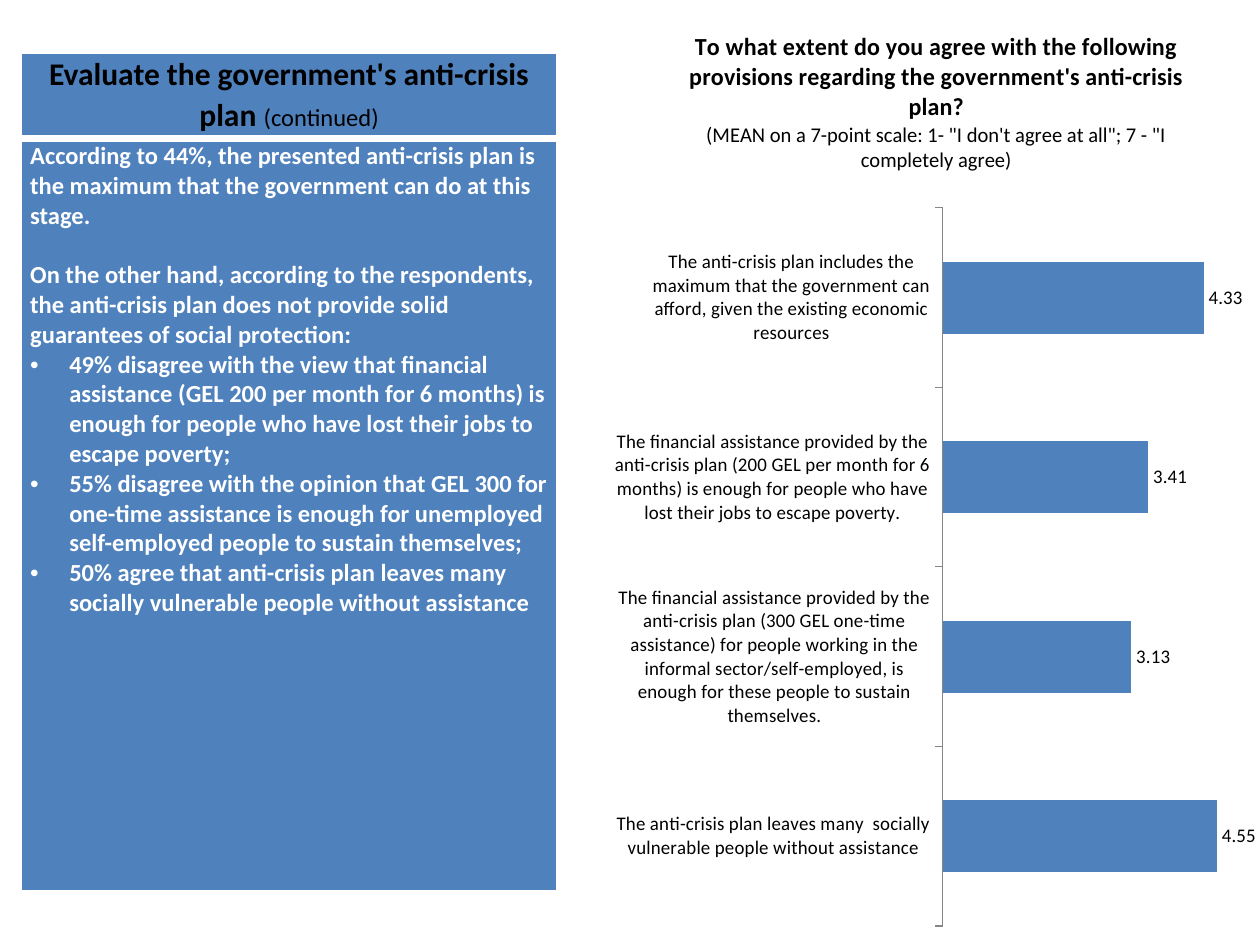
"""Build a slide on public views of the government's anti-crisis plan."""
from lxml import etree
from pptx import Presentation
from pptx.chart.data import CategoryChartData
from pptx.dml.color import RGBColor
from pptx.enum.chart import XL_CHART_TYPE, XL_LABEL_POSITION, XL_TICK_LABEL_POSITION, XL_TICK_MARK
from pptx.enum.text import PP_ALIGN
from pptx.oxml import parse_xml
from pptx.oxml.ns import nsdecls, qn
from pptx.util import Inches, Pt

BAR_CLUSTERED = XL_CHART_TYPE.BAR_CLUSTERED
OUTSIDE_END = XL_LABEL_POSITION.OUTSIDE_END
LABELS_LOW = XL_TICK_LABEL_POSITION.LOW
TICK_OUTSIDE, TICK_NONE = XL_TICK_MARK.OUTSIDE, XL_TICK_MARK.NONE
CENTER = PP_ALIGN.CENTER
BLUE = RGBColor(0x4F, 0x81, 0xBD)
WHITE = RGBColor(0xFF, 0xFF, 0xFF)
BLACK = RGBColor(0, 0, 0)
GRAY = RGBColor(0x86, 0x86, 0x86)
FONT = "Calibri"
BORDERS = {"lnL": 1, "lnR": 1, "lnT": 1, "lnB": 3}
INDENT = Inches(0.31)

HEADING = [("Evaluate the government's anti-crisis plan ", 18, True), ("(continued)", 14, False)]
FINDINGS = [
    "According to 44%, the presented anti-crisis plan is the maximum that the government can do at this stage.",
    "On the other hand, according to the respondents, the anti-crisis plan does not provide solid guarantees of social protection:",
]
BULLETS = [
    "49% disagree with the view that financial assistance (GEL 200 per month for 6 months) is enough for people who have lost their jobs to escape poverty;",
    "55% disagree with the opinion that GEL 300 for one-time assistance is enough for unemployed self-employed people to sustain themselves;",
    "50% agree that anti-crisis plan leaves many socially vulnerable people without assistance",
]
QUESTION = [
    ("To what extent do you agree with the following provisions regarding the government's anti-crisis plan?", 14, True),
    ("(MEAN on a 7-point scale: 1- \"I don't agree at all\"; 7 - \"I completely agree)", 12, False),
]
AGREEMENT = {
    "The anti-crisis plan includes the maximum that the government can afford, given the existing economic resources": 4.33,
    "The financial assistance provided by the anti-crisis plan (200 GEL per month for 6 months) is enough for people who have lost their jobs to escape poverty.": 3.41,
    "The financial assistance provided by the anti-crisis plan (300 GEL one-time assistance) for people working in the informal sector/self-employed, is enough for these people to sustain themselves.": 3.13,
    "The anti-crisis plan leaves many  socially vulnerable people without assistance": 4.55,
}


def format_run(run, size, bold, color):
    run.font.name = FONT
    run.font.size = Pt(size)
    run.font.bold = bold
    run.font.color.rgb = color


def add_panel(slide, top, height):
    frame = slide.shapes.add_table(1, 1, Inches(0.17), Inches(top), Inches(4.25), Inches(height))
    cell = frame.table.cell(0, 0)
    cell.margin_left = cell.margin_right = Inches(0.07)
    cell.margin_top = cell.margin_bottom = 0
    properties = cell._tc.get_or_add_tcPr()
    for side, width in BORDERS.items():
        properties.append(parse_xml(
            f'<a:{side} {nsdecls("a")} w="{Pt(width)}"><a:solidFill>'
            f'<a:srgbClr val="{WHITE}"/></a:solidFill></a:{side}>'))
    cell.fill.solid()
    cell.fill.fore_color.rgb = BLUE
    return cell.text_frame


presentation = Presentation()
presentation.slide_width, presentation.slide_height = Inches(10), Inches(7.5)
slide = presentation.slides.add_slide(presentation.slide_layouts[6])

heading = add_panel(slide, 0.42, 0.67).paragraphs[0]
heading.alignment = CENTER
heading.line_spacing = 1.07
for text, size, bold in HEADING:
    run = heading.add_run()
    run.text = text
    format_run(run, size, bold, BLACK)

findings = add_panel(slide, 1.12, 5.96)
findings.text = "\n".join(FINDINGS + BULLETS)
for paragraph in findings.paragraphs:
    format_run(paragraph.runs[0], 14, True, WHITE)
findings.paragraphs[1].space_before = Pt(17)
for paragraph in findings.paragraphs[len(FINDINGS):]:
    properties = paragraph._p.get_or_add_pPr()
    properties.set("marL", str(INDENT))
    properties.set("indent", str(-INDENT))
    etree.SubElement(properties, qn("a:buFont")).set("typeface", "Arial")
    etree.SubElement(properties, qn("a:buChar")).set("char", "•")

chart_data = CategoryChartData(number_format="###0.00")
chart_data.categories = list(AGREEMENT)
chart_data.add_series("Series 1", list(AGREEMENT.values()))
chart = slide.shapes.add_chart(
    BAR_CLUSTERED, Inches(4.88), 0, Inches(5.09), presentation.slide_height, chart_data).chart
chart.has_legend = False
chart.font.name = FONT
chart.font.size = Pt(11)
chart.font.color.rgb = BLACK

title_frame = chart.chart_title.text_frame
title_frame.text = "\n".join(text for text, size, bold in QUESTION)
for paragraph, (text, size, bold) in zip(title_frame.paragraphs, QUESTION):
    paragraph.alignment = CENTER
    format_run(paragraph.runs[0], size, bold, BLACK)
chart.chart_title.include_in_layout = False

category_axis = chart.category_axis
category_axis.reverse_order = True
category_axis.major_tick_mark = TICK_OUTSIDE
category_axis.minor_tick_mark = TICK_NONE
category_axis.tick_label_position = LABELS_LOW
category_axis.format.line.color.rgb = GRAY
category_axis.format.line.width = Pt(0.75)
value_axis = chart.value_axis
value_axis.minimum_scale, value_axis.maximum_scale = 0, 5
value_axis.has_major_gridlines = False
value_axis.visible = False

plot = chart.plots[0]
plot.gap_width = 150
plot.vary_by_categories = False
plot.has_data_labels = True
labels = plot.data_labels
labels.show_value = True
labels.number_format = "###0.00"
labels.number_format_is_linked = False
labels.position = OUTSIDE_END
bars = plot.series[0].format
bars.fill.solid()
bars.fill.fore_color.rgb = BLUE
bars.line.fill.background()

plot_area = chart._chartSpace.chart.plotArea
for old_layout in plot_area.findall(qn("c:layout")):
    plot_area.remove(old_layout)
layout = etree.Element(qn("c:layout"))
manual = etree.SubElement(layout, qn("c:manualLayout"))
for tag, value in [("layoutTarget", "inner"), ("xMode", "edge"), ("yMode", "edge"),
                   ("x", 0.51), ("y", 0.22), ("w", 0.48), ("h", 0.76)]:
    etree.SubElement(manual, qn(f"c:{tag}")).set("val", str(value))
plot_area.insert(0, layout)

presentation.save("out.pptx")
